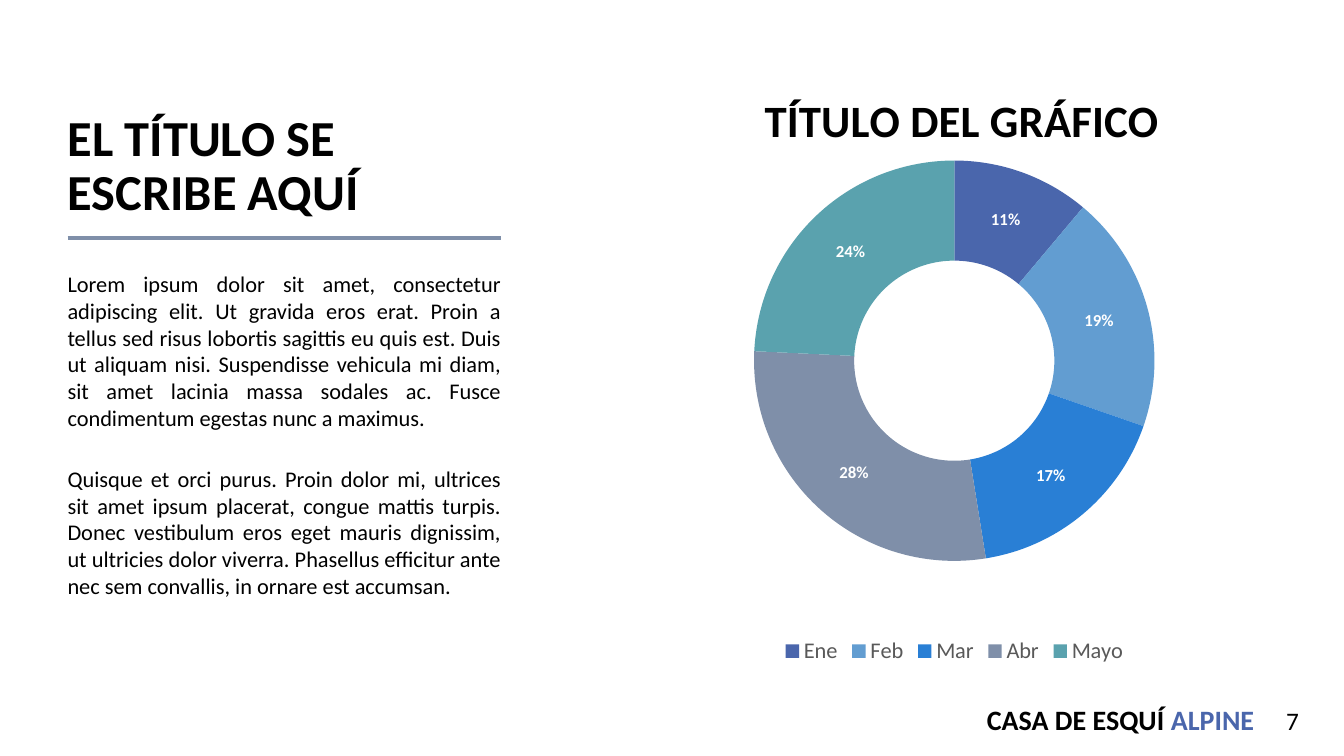
import pptx
import pptx.chart.data
import pptx.dml.color
import pptx.enum.chart
import pptx.enum.shapes
import pptx.enum.text
import pptx.oxml
import pptx.oxml.ns
import pptx.util

Inches = pptx.util.Inches
ALIGN = pptx.enum.text.PP_ALIGN
ANCHOR = pptx.enum.text.MSO_ANCHOR
qn = pptx.oxml.ns.qn

FONT = "Calibri"
BLACK, WHITE, GREY = "000000", "FFFFFF", "595959"
INDIGO, SLATE = "4A66AC", "7F8FA9"
MONTHS = [
    ("Ene", 11, INDIGO),
    ("Feb", 19, "629DD1"),
    ("Mar", 17, "297FD5"),
    ("Abr", 28, SLATE),
    ("Mayo", 24, "5AA2AE"),
]
BODY = [
    "Lorem ipsum dolor sit amet, consectetur adipiscing elit. Ut gravida eros erat. "
    "Proin a tellus sed risus lobortis sagittis eu quis est. Duis ut aliquam nisi. "
    "Suspendisse vehicula mi diam, sit amet lacinia massa sodales ac. "
    "Fusce condimentum egestas nunc a maximus.",
    "Quisque et orci purus. Proin dolor mi, ultrices sit amet ipsum placerat, congue "
    "mattis turpis. Donec vestibulum eros eget mauris dignissim, ut ultricies dolor "
    "viverra. Phasellus efficitur ante nec sem convallis, in ornare est accumsan.",
]


def rgb(color):
    """Turn a hex string into a colour."""
    return pptx.dml.color.RGBColor.from_string(color)


def style_font(font, size, color=BLACK, bold=False):
    """Apply the deck font with a size, colour and weight."""
    font.name = FONT
    font.size = pptx.util.Pt(size)
    font.bold = bold
    font.color.rgb = rgb(color)


def add_text(slide, box, paragraphs, size, bold=False, align=ALIGN.LEFT, anchor=ANCHOR.TOP,
             insets=(0, 0.05), gap=0, spacing=None, wrap=True):
    """Add a text box; each paragraph is a list of (text, colour) runs."""
    tf = slide.shapes.add_textbox(*map(Inches, box)).text_frame
    tf.word_wrap = wrap
    tf.vertical_anchor = anchor
    tf.margin_left = tf.margin_right = Inches(insets[0])
    tf.margin_top = tf.margin_bottom = Inches(insets[1])
    for i, runs in enumerate(paragraphs):
        p = tf.paragraphs[0] if i == 0 else tf.add_paragraph()
        p.alignment = align
        p.space_before = pptx.util.Pt(gap if i else 0)
        if spacing:
            p.line_spacing = spacing
        for text, color in runs:
            r = p.add_run()
            r.text = text
            style_font(r.font, size, color, bold)


def set_layout(parent, index, **values):
    """Give a chart part a manual layout at the given child index."""
    for old in parent.findall(qn("c:layout")):
        parent.remove(old)
    items = "".join(f'<c:{name} val="{value}"/>' for name, value in values.items())
    parent.insert(index, pptx.oxml.parse_xml(
        f'<c:layout {pptx.oxml.ns.nsdecls("c")}><c:manualLayout>{items}'
        '</c:manualLayout></c:layout>'))


def add_article(slide, x, y, w):
    """Place the heading, rule and body text in a column."""
    add_text(slide, (x, y, w, 1.75), [[("EL TÍTULO SE ESCRIBE AQUÍ", BLACK)]], 36,
             bold=True, anchor=ANCHOR.BOTTOM, spacing=0.9)
    rule_y = Inches(y + 1.86)
    line = slide.shapes.add_connector(
        pptx.enum.shapes.MSO_CONNECTOR.STRAIGHT, Inches(x), rule_y, Inches(x + w), rule_y)
    line.line.color.rgb = rgb(SLATE)
    line.line.width = pptx.util.Pt(3)
    line._element.spPr.append(pptx.oxml.parse_xml(
        f'<a:effectLst {pptx.oxml.ns.nsdecls("a")}/>'))
    add_text(slide, (x, y + 2.13, w, 4), [[(text, BLACK)] for text in BODY], 16,
             align=ALIGN.JUSTIFY, gap=24)


def add_doughnut(slide, x, y, w, h):
    """Place the monthly doughnut chart in a box."""
    months, values, colors = zip(*MONTHS)
    data = pptx.chart.data.CategoryChartData()
    data.categories = months
    data.add_series("Series 1", values)
    chart = slide.shapes.add_chart(
        pptx.enum.chart.XL_CHART_TYPE.DOUGHNUT, *map(Inches, (x, y, w, h)), data).chart
    style_font(chart.font, 10)

    chart.has_title = True
    p = chart.chart_title.text_frame.paragraphs[0]
    r = p.add_run()
    r.text = "TÍTULO DEL GRÁFICO"
    style_font(r.font, 32, bold=True)
    chart.chart_title.include_in_layout = False
    set_layout(chart.chart_title._element, 1, xMode="edge", yMode="edge", x=0.19, y=0.05)

    chart.has_legend = True
    chart.legend.position = pptx.enum.chart.XL_LEGEND_POSITION.BOTTOM
    chart.legend.include_in_layout = False
    style_font(chart.legend.font, 16, GREY)

    plot = chart.plots[0]
    plot.vary_by_categories = True
    plot._element.find(qn("c:holeSize")).set("val", "70")
    for i, color in enumerate(colors):
        fill = plot.series[0].points[i].format.fill
        fill.solid()
        fill.fore_color.rgb = rgb(color)
    labels = plot.series[0].data_labels
    labels.show_percentage = True
    labels.show_value = False
    labels.number_format = "0%"
    labels.number_format_is_linked = False
    style_font(labels.font, 12, WHITE, True)
    set_layout(plot._element.getparent(), 0, layoutTarget="inner", xMode="edge", yMode="edge",
               x=0.092, y=0.178, w=0.816, h=0.647)


def add_footer(slide, right, y):
    """Place the house name and page number against the right edge."""
    add_text(slide, (right - 3.24, y, 2.72, 0.38),
             [[("CASA DE ESQUÍ ", BLACK), ("ALPINE", INDIGO)]], 20, bold=True,
             align=ALIGN.RIGHT, anchor=ANCHOR.MIDDLE, insets=(0.02, 0.02), wrap=False)
    add_text(slide, (right - 3, y, 3, 0.4), [[("7", BLACK)]], 18,
             align=ALIGN.RIGHT, insets=(0.1, 0.05))


def main():
    """Build the slide and save it."""
    prs = pptx.Presentation()
    prs.slide_width, prs.slide_height = Inches(13.33), Inches(7.5)
    slide = prs.slides.add_slide(prs.slide_layouts[6])
    add_article(slide, 0.67, 0.5, 4.3)
    add_doughnut(slide, 6.3, 0.5, 6.33, 6.14)
    add_footer(slide, 12.98, 6.95)
    prs.save("out.pptx")


if __name__ == "__main__":
    main()
